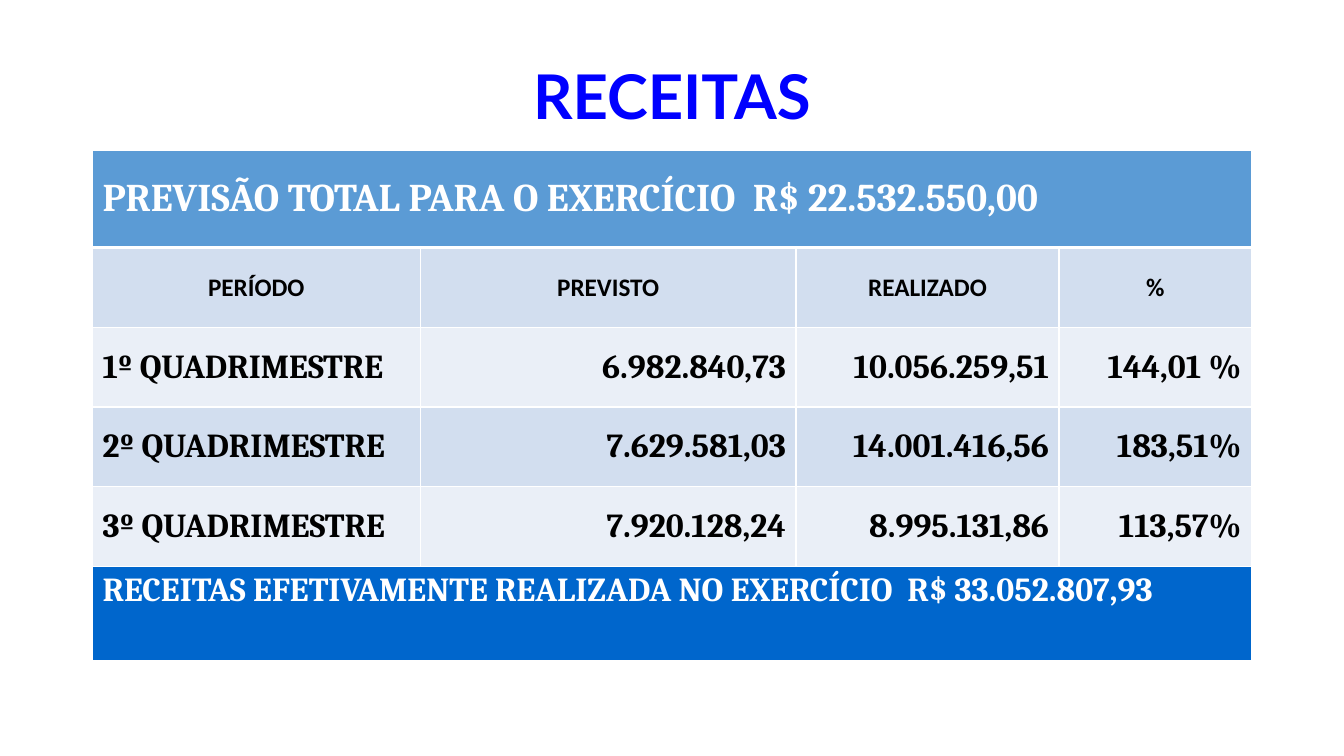
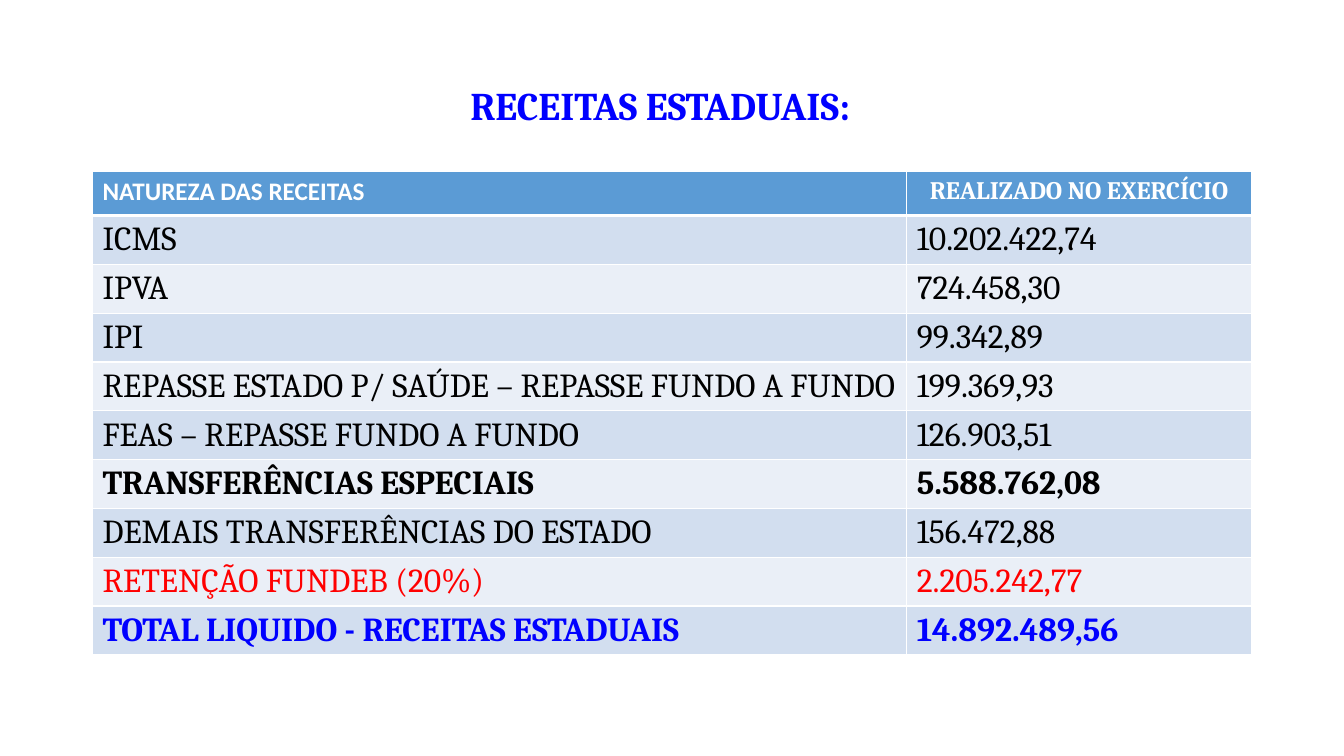
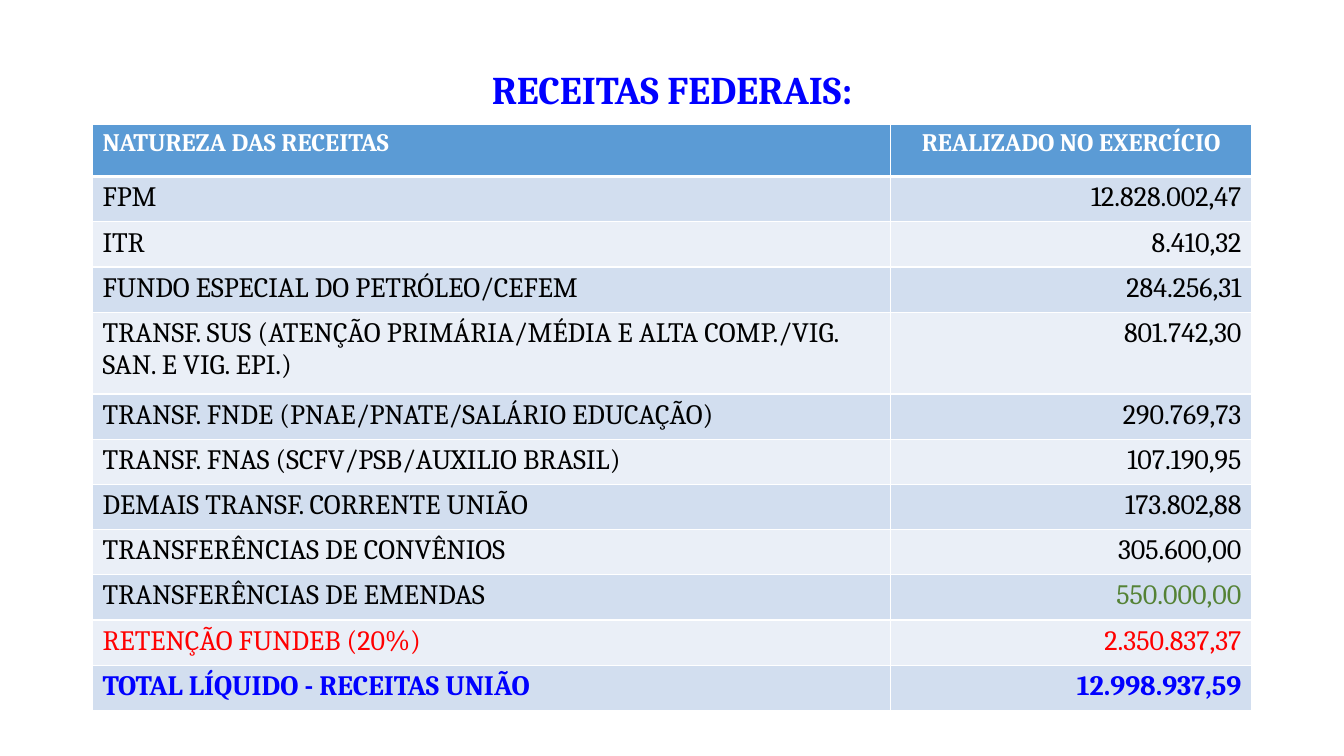
from itertools import cycle

from lxml import etree
from pptx import Presentation
from pptx.dml.color import RGBColor
from pptx.enum.text import MSO_ANCHOR, PP_ALIGN
from pptx.oxml.ns import qn
from pptx.util import Cm, Pt

WHITE, BLACK, BLUE, RED, GREEN = "FFFFFF", "000000", "0000FF", "FF0000", "548235"
HEADER, TOTAL, BANDS = "5B9BD5", "0066CC", ("D2DEEF", "EAEFF7")
LEFT, WIDTH = 2.33, 29.21
TITLE_ONLY = 5
START, CENTER, END = PP_ALIGN.LEFT, PP_ALIGN.CENTER, PP_ALIGN.RIGHT


def rgb(color):
    return RGBColor.from_string(color)


def set_font(p, size, color=BLACK, bold=False, name="Cambria"):
    f = p.font
    f.name, f.size, f.bold = name, Pt(size), bold
    f.color.rgb = rgb(color)


def add_title_slide(prs, text, box, size=28, name="Cambria"):
    """Add a slide whose centred title fills box (left, top, width, height in cm)."""
    slide = prs.slides.add_slide(prs.slide_layouts[TITLE_ONLY])
    title = slide.shapes.title
    title.left, title.top, title.width, title.height = map(Cm, box)
    tf = title.text_frame
    tf.text = text
    tf.vertical_anchor = MSO_ANCHOR.MIDDLE
    p = tf.paragraphs[0]
    p.alignment, p.line_spacing = CENTER, 0.9
    set_font(p, size, BLUE, True, name)
    return slide


def add_grid(slide, top, cols, rows):
    """Add a table with white rules, a header row and banded rows below it."""
    shape = slide.shapes.add_table(len(rows), len(cols), Cm(LEFT), Cm(top),
                                   Cm(WIDTH), Cm(sum(rows)))
    table = shape.table
    table.first_row = table.horz_banding = False
    for col, width in zip(table.columns, cols):
        col.width = Cm(width)
    for row, height in zip(table.rows, rows):
        row.height = Cm(height)
    bands = cycle(BANDS)
    for i, row in enumerate(table.rows):
        fill = next(bands) if i else HEADER
        for cell in row.cells:
            set_fill(cell, fill)
            set_borders(cell, top=3 if i == 1 else 1, bottom=1 if i else 3)
    return table


def set_fill(cell, color):
    cell.fill.solid()
    cell.fill.fore_color.rgb = rgb(color)


def set_borders(cell, top, bottom):
    tc_pr = cell._tc.get_or_add_tcPr()
    sides = (("a:lnL", 1), ("a:lnR", 1), ("a:lnT", top), ("a:lnB", bottom))
    for i, (tag, width) in enumerate(sides):
        ln = etree.Element(qn(tag), w=str(Pt(width)))
        fill = etree.SubElement(ln, qn("a:solidFill"))
        etree.SubElement(fill, qn("a:srgbClr"), val=WHITE)
        tc_pr.insert(i, ln)


def write(cell, text, size, align=START, anchor=MSO_ANCHOR.TOP, **font):
    cell.text = text
    cell.vertical_anchor = anchor
    p = cell.text_frame.paragraphs[0]
    p.alignment = align
    set_font(p, size, **font)


def summary_slide(prs):
    slide = add_title_slide(prs, "RECEITAS", (LEFT, 1.02, WIDTH, 3), 44, "Lato")
    table = add_grid(slide, 3.78, (8.26, 9.47, 6.63, 4.85),
                     (2.46, 2.01, 2.01, 2.01, 2.01, 2.36))
    for row in (0, 5):
        table.cell(row, 0).merge(table.cell(row, 3))
    set_fill(table.cell(5, 0), TOTAL)
    middle = MSO_ANCHOR.MIDDLE
    write(table.cell(0, 0), "PREVISÃO TOTAL PARA O EXERCÍCIO  R$ 22.532.550,00", 28,
          anchor=middle, color=WHITE, bold=True)
    write(table.cell(5, 0),
          "RECEITAS EFETIVAMENTE REALIZADA NO EXERCÍCIO  R$ 33.052.807,93", 24,
          color=WHITE, bold=True)
    for c, text in enumerate(("PERÍODO", "PREVISTO", "REALIZADO", "%")):
        write(table.cell(1, c), text, 18, CENTER, middle, bold=True, name="Calibri")
    periods = (
        ("1º QUADRIMESTRE", "6.982.840,73", "10.056.259,51", "144,01 %"),
        ("2º QUADRIMESTRE", "7.629.581,03", "14.001.416,56", "183,51%"),
        ("3º QUADRIMESTRE", "7.920.128,24", "8.995.131,86", "113,57%"),
    )
    for r, period in enumerate(periods, 2):
        for c, text in enumerate(period):
            write(table.cell(r, c), text, 24, END if c else START, middle, bold=True)


def revenue_table(slide, top, cols, rows, entries, size, align, header_font="Cambria"):
    """Fill a two-column table; an entry is (nature, amount, font, amount font)."""
    table = add_grid(slide, top, cols, rows)
    write(table.cell(0, 0), "NATUREZA DAS RECEITAS", 18,
          color=WHITE, bold=True, name=header_font)
    write(table.cell(0, 1), "REALIZADO NO EXERCÍCIO", 18, CENTER, color=WHITE, bold=True)
    for r, (nature, amount, *fonts) in enumerate(entries, 1):
        font = fonts[0] if fonts else {}
        write(table.cell(r, 0), nature, size, **font)
        write(table.cell(r, 1), amount, size, align, **(fonts[-1] if fonts else {}))


BOLD = {"bold": True}
DEDUCTION = {"color": RED}
NET = {"color": BLUE, "bold": True}


def state_slide(prs):
    slide = add_title_slide(prs, "RECEITAS ESTADUAIS:", (LEFT - 0.3, 1.37, WIDTH, 2.67))
    entries = (
        ("ICMS", "10.202.422,74"),
        ("IPVA", "724.458,30"),
        ("IPI", "99.342,89"),
        ("REPASSE ESTADO P/ SAÚDE – REPASSE FUNDO A FUNDO", "199.369,93"),
        ("FEAS – REPASSE FUNDO A FUNDO", "126.903,51"),
        ("TRANSFERÊNCIAS ESPECIAIS", "5.588.762,08", BOLD),
        ("DEMAIS TRANSFERÊNCIAS DO ESTADO", "156.472,88"),
        ("RETENÇÃO FUNDEB (20%)", "2.205.242,77", DEDUCTION),
        ("TOTAL LIQUIDO - RECEITAS ESTADUAIS", "14.892.489,56", NET),
    )
    revenue_table(slide, 4.32, (20.52, 8.69), [1.11] + [1.23] * len(entries),
                  entries, 24, START, "Calibri")


def federal_slide(prs):
    slide = add_title_slide(prs, "RECEITAS FEDERAIS:", (LEFT, 1.4, WIDTH, 1.85))
    entries = (
        ("FPM", "12.828.002,47"),
        ("ITR", "8.410,32"),
        ("FUNDO ESPECIAL DO PETRÓLEO/CEFEM", "284.256,31"),
        ("TRANSF. SUS (ATENÇÃO PRIMÁRIA/MÉDIA E ALTA COMP./VIG. SAN. E VIG. EPI.)",
         "801.742,30"),
        ("TRANSF. FNDE (PNAE/PNATE/SALÁRIO EDUCAÇÃO)", "290.769,73"),
        ("TRANSF. FNAS (SCFV/PSB/AUXILIO BRASIL)", "107.190,95"),
        ("DEMAIS TRANSF. CORRENTE UNIÃO", "173.802,88"),
        ("TRANSFERÊNCIAS DE CONVÊNIOS", "305.600,00"),
        ("TRANSFERÊNCIAS DE EMENDAS", "550.000,00", {}, {"color": GREEN}),
        ("RETENÇÃO FUNDEB (20%)", "2.350.837,37", DEDUCTION),
        ("TOTAL LÍQUIDO - RECEITAS UNIÃO", "12.998.937,59", NET),
    )
    rows = [1.32] + [1.14] * len(entries)
    rows[4] = 2.06
    revenue_table(slide, 3.13, (20.12, 9.09), rows, entries, 20, END)


def main():
    prs = Presentation()
    prs.slide_width, prs.slide_height = Cm(33.87), Cm(19.05)
    summary_slide(prs)
    state_slide(prs)
    federal_slide(prs)
    prs.save("out.pptx")


if __name__ == "__main__":
    main()
